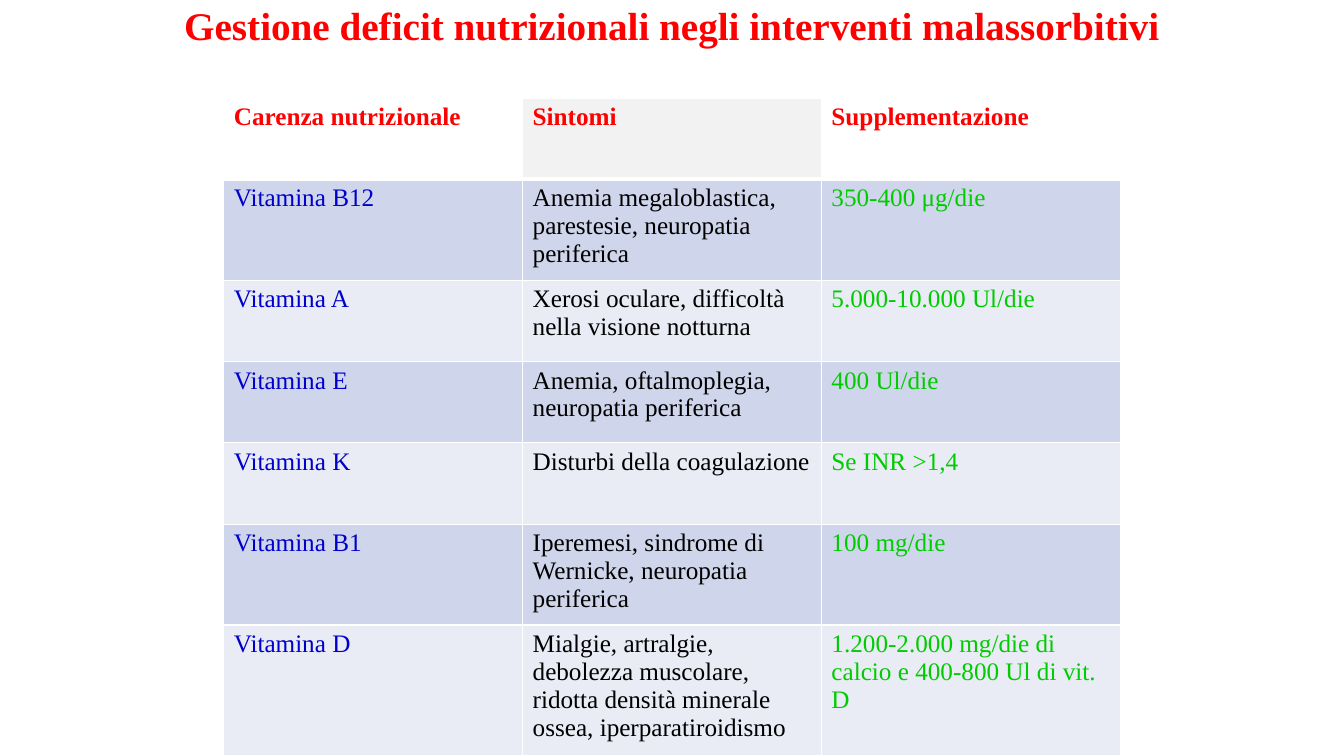
from dataclasses import dataclass

import lxml.etree
import pptx
import pptx.dml.color
import pptx.enum.text
import pptx.oxml.ns
import pptx.table
import pptx.text.text
import pptx.util
from pptx.util import Cm


@dataclass(frozen=True)
class Theme:
    font: str = "Times New Roman"
    title_size: int = 28
    table_size: int = 18
    heading: str = "FF0000"
    column_colours: tuple[str, ...] = ("0000CC", "000000", "00CC00")
    header_fills: tuple[str, ...] = ("FFFFFF", "F2F2F2", "FFFFFF")
    band_fills: tuple[str, ...] = ("CFD5EA", "E9EBF5")
    border: str = "FFFFFF"
    thin_border: int = 1
    thick_border: int = 3


@dataclass(frozen=True)
class Deficiency:
    nutrient: str
    symptoms: str
    supplement: str


THEME = Theme()
TITLE = "Gestione deficit nutrizionali negli interventi malassorbitivi"
HEADINGS = Deficiency("Carenza nutrizionale", "Sintomi", "Supplementazione")
DEFICIENCIES = [
    Deficiency("Vitamina B12", "Anemia megaloblastica, parestesie, neuropatia periferica",
               "350-400 μg/die"),
    Deficiency("Vitamina A", "Xerosi oculare, difficoltà nella visione notturna",
               "5.000-10.000 Ul/die"),
    Deficiency("Vitamina E", "Anemia, oftalmoplegia, neuropatia periferica", "400 Ul/die"),
    Deficiency("Vitamina K", "Disturbi della coagulazione", "Se INR >1,4"),
    Deficiency("Vitamina B1", "Iperemesi, sindrome di Wernicke, neuropatia periferica",
               "100 mg/die"),
    Deficiency("Vitamina D", "Mialgie, artralgie, debolezza muscolare, ridotta densità "
               "minerale ossea, iperparatiroidismo",
               "1.200-2.000 mg/die di calcio e 400-800 Ul di vit. D"),
]
COLUMN_WIDTH = Cm(7.53)
ROW_HEIGHT = Cm(2.05)


def write(frame: pptx.text.text.TextFrame, text: str, size: int, colour: str,
          bold: bool) -> None:
    """Put one formatted paragraph in a text frame."""
    frame.text = text
    for span in frame.paragraphs[0].runs:
        span.font.name = THEME.font
        span.font.size = pptx.util.Pt(size)
        span.font.bold = bold
        span.font.color.rgb = pptx.dml.color.RGBColor.from_string(colour)


def add_border(cell: pptx.table._Cell, side: str, points: int) -> None:
    """Draw one solid cell border; side is L, R, T or B."""
    qn = pptx.oxml.ns.qn
    properties = cell._tc.get_or_add_tcPr()
    line = lxml.etree.SubElement(properties, qn(f"a:ln{side}"), w=str(pptx.util.Pt(points)))
    solid = lxml.etree.SubElement(line, qn("a:solidFill"))
    lxml.etree.SubElement(solid, qn("a:srgbClr"), val=THEME.border)


def format_cell(cell: pptx.table._Cell, row: int, column: int, text: str) -> None:
    """Fill in a cell by its place: the header first, then alternating bands."""
    header = row == 0
    # Borders come before the fill in the cell properties
    for side in "LRTB":
        under_header = (row, side) in ((0, "B"), (1, "T"))
        add_border(cell, side, THEME.thick_border if under_header else THEME.thin_border)
    fill = THEME.header_fills[column] if header else THEME.band_fills[(row - 1) % 2]
    cell.fill.solid()
    cell.fill.fore_color.rgb = pptx.dml.color.RGBColor.from_string(fill)
    colour = THEME.heading if header else THEME.column_colours[column]
    write(cell.text_frame, text, THEME.table_size, colour, header)


def main() -> None:
    deck = pptx.Presentation()
    deck.slide_width, deck.slide_height = Cm(33.87), Cm(19.05)
    page = deck.slides.add_slide(deck.slide_layouts[6])

    # Title
    box = page.shapes.add_textbox(Cm(4.23), Cm(0), Cm(25.4), Cm(1.35))
    frame = box.text_frame
    frame.word_wrap = True
    frame.vertical_anchor = pptx.enum.text.MSO_ANCHOR.BOTTOM
    write(frame, TITLE, THEME.title_size, THEME.heading, True)
    para = frame.paragraphs[0]
    para.alignment = pptx.enum.text.PP_ALIGN.CENTER
    para.line_spacing = 0.9

    # Table of deficiencies
    entries = [HEADINGS, *DEFICIENCIES]
    table = page.shapes.add_table(
        len(entries), 3, Cm(5.64), Cm(2.47), COLUMN_WIDTH * 3, ROW_HEIGHT * len(entries)
    ).table
    for table_column in table.columns:
        table_column.width = COLUMN_WIDTH
    for row, entry in enumerate(entries):
        table.rows[row].height = ROW_HEIGHT
        for column, text in enumerate((entry.nutrient, entry.symptoms, entry.supplement)):
            format_cell(table.cell(row, column), row, column, text)

    deck.save("out.pptx")


if __name__ == "__main__":
    main()
